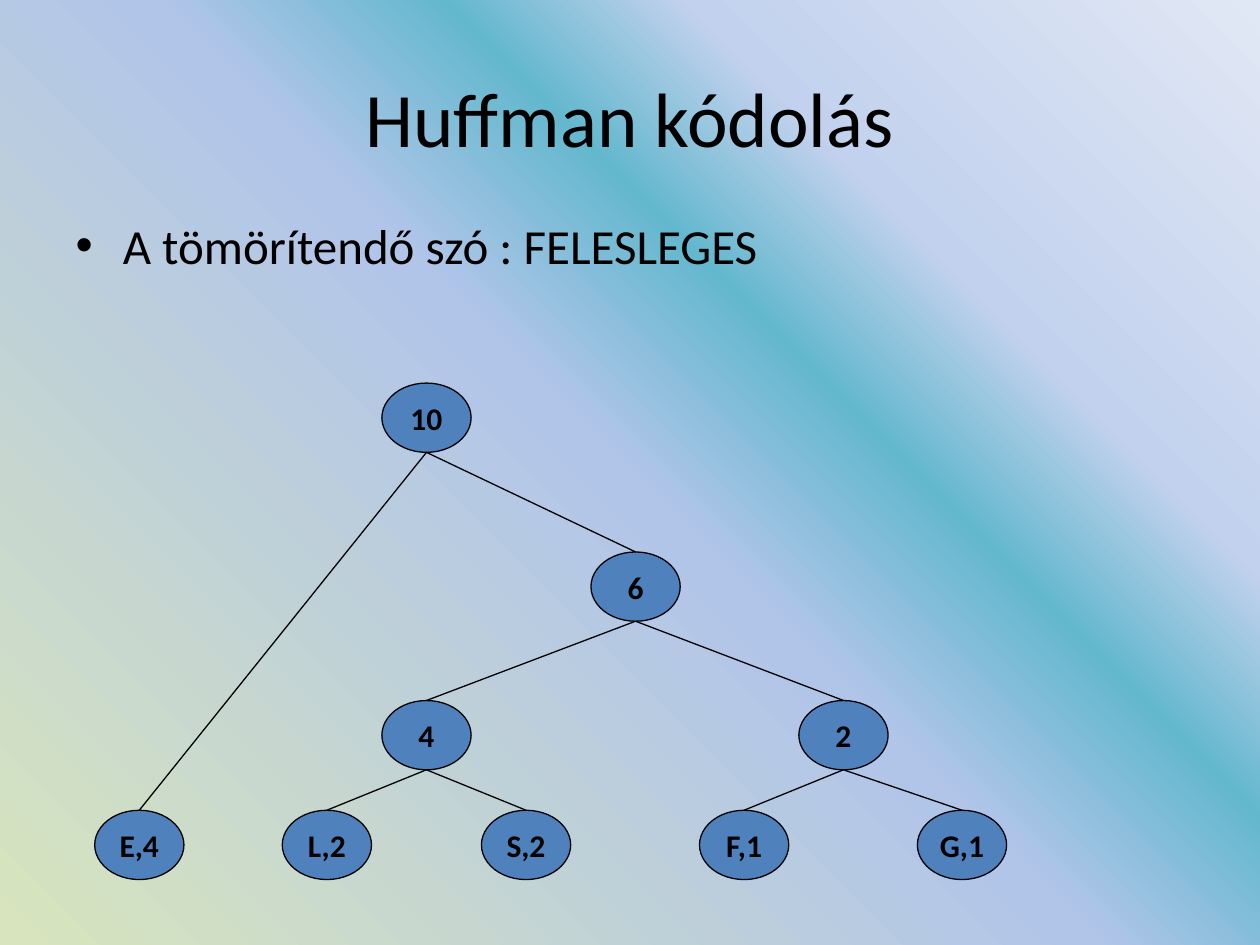
"""Build a slide showing the Huffman tree of a Hungarian word."""
import lxml.etree
import pptx
import pptx.dml.color
import pptx.enum.shapes
import pptx.enum.text
import pptx.oxml.ns
import pptx.util

Pt = pptx.util.Pt
RGBColor = pptx.dml.color.RGBColor
ALIGN = pptx.enum.text.PP_ALIGN
ANCHOR = pptx.enum.text.MSO_ANCHOR
qn = pptx.oxml.ns.qn

BLACK = RGBColor(0x00, 0x00, 0x00)
NODE_BLUE = RGBColor(0x4F, 0x81, 0xBD)
BACKGROUND = [
    (0, RGBColor(0xD7, 0xE4, 0xBD)),
    (50, RGBColor(0xB1, 0xC5, 0xE9)),
    (63, RGBColor(0x64, 0xB8, 0xCE)),
    (74, RGBColor(0xC2, 0xD1, 0xED)),
    (100, RGBColor(0xE1, 0xE8, 0xF5)),
]

TITLE = "Huffman kódolás"
BODY = "A tömörítendő szó : FELESLEGES"
LEVEL_TOPS = [218.9, 315.4, 400.3, 463]
NODES = {
    "E,4": (79.6, 3),
    "L,2": (186.8, 3),
    "S,2": (300.6, 3),
    "F,1": (425.2, 3),
    "G,1": (549.7, 3),
    "2": (482, 2),
    "4": (243.7, 2),
    "6": (363.2, 1),
    "10": (243.7, 0),
}
CHILDREN = {
    "4": ["L,2", "S,2"],
    "2": ["F,1", "G,1"],
    "6": ["4", "2"],
    "10": ["6", "E,4"],
}
NODE_WIDTH, NODE_HEIGHT = 51, 39.6
LINE_WIDTH = 0.75


def apply(target, **values):
    for name, value in values.items():
        setattr(target, name, value)


def write(shape, text, size, bold, frame_format, para_format):
    frame = shape.text_frame
    apply(frame, text=text, **frame_format)
    para = frame.paragraphs[0]
    apply(para, **para_format)
    span = para.runs[0]
    apply(span.font, name="Calibri", size=Pt(size), bold=bold)
    span.font.color.rgb = BLACK


def outline(shape):
    shape.line.color.rgb = BLACK
    shape.line.width = Pt(LINE_WIDTH)


def paint_background(page):
    fill = page.background.fill
    fill.gradient()
    fill.gradient_angle = 45
    stops = next(page.element.iter(qn("a:gsLst")))
    for stop in list(stops):
        stops.remove(stop)
    for percent, color in BACKGROUND:
        stop = lxml.etree.SubElement(stops, qn("a:gs"), pos=str(percent * 1000))
        lxml.etree.SubElement(stop, qn("a:srgbClr"), val=str(color))


def fill_placeholders(page):
    title, body = page.placeholders
    apply(title, left=Pt(36), top=Pt(21.6), width=Pt(648), height=Pt(90))
    apply(body, left=Pt(36), top=Pt(126), width=Pt(648), height=Pt(36))
    fixed = {"auto_size": pptx.enum.text.MSO_AUTO_SIZE.NONE, "word_wrap": True}
    write(title, TITLE, 44, False, {**fixed, "vertical_anchor": ANCHOR.MIDDLE},
          {"alignment": ALIGN.CENTER})
    write(body, BODY, 28, False, {**fixed, "vertical_anchor": ANCHOR.TOP},
          {"alignment": ALIGN.LEFT, "line_spacing": 0.8})


def add_node(page, label, center, level):
    node = page.shapes.add_shape(
        pptx.enum.shapes.MSO_SHAPE.OVAL, Pt(center - NODE_WIDTH / 2),
        Pt(LEVEL_TOPS[level]), Pt(NODE_WIDTH), Pt(NODE_HEIGHT))
    node.shadow.inherit = False
    node.fill.solid()
    node.fill.fore_color.rgb = NODE_BLUE
    outline(node)
    write(node, label, 18, True,
          {"word_wrap": False, "vertical_anchor": ANCHOR.MIDDLE},
          {"alignment": ALIGN.CENTER})


def add_branch(page, parent, child):
    parent_x, parent_level = NODES[parent]
    child_x, child_level = NODES[child]
    branch = page.shapes.add_connector(
        pptx.enum.shapes.MSO_CONNECTOR.STRAIGHT,
        Pt(parent_x), Pt(LEVEL_TOPS[parent_level] + NODE_HEIGHT),
        Pt(child_x), Pt(LEVEL_TOPS[child_level]))
    outline(branch)
    lxml.etree.SubElement(branch.element.spPr, qn("a:effectLst"))


def main():
    deck = pptx.Presentation()
    apply(deck, slide_width=Pt(720), slide_height=Pt(540))
    page = deck.slides.add_slide(deck.slide_layouts[1])
    paint_background(page)
    fill_placeholders(page)
    for label, (center, level) in NODES.items():
        add_node(page, label, center, level)
    for parent, children in CHILDREN.items():
        for child in children:
            add_branch(page, parent, child)
    deck.save("out.pptx")


if __name__ == "__main__":
    main()
